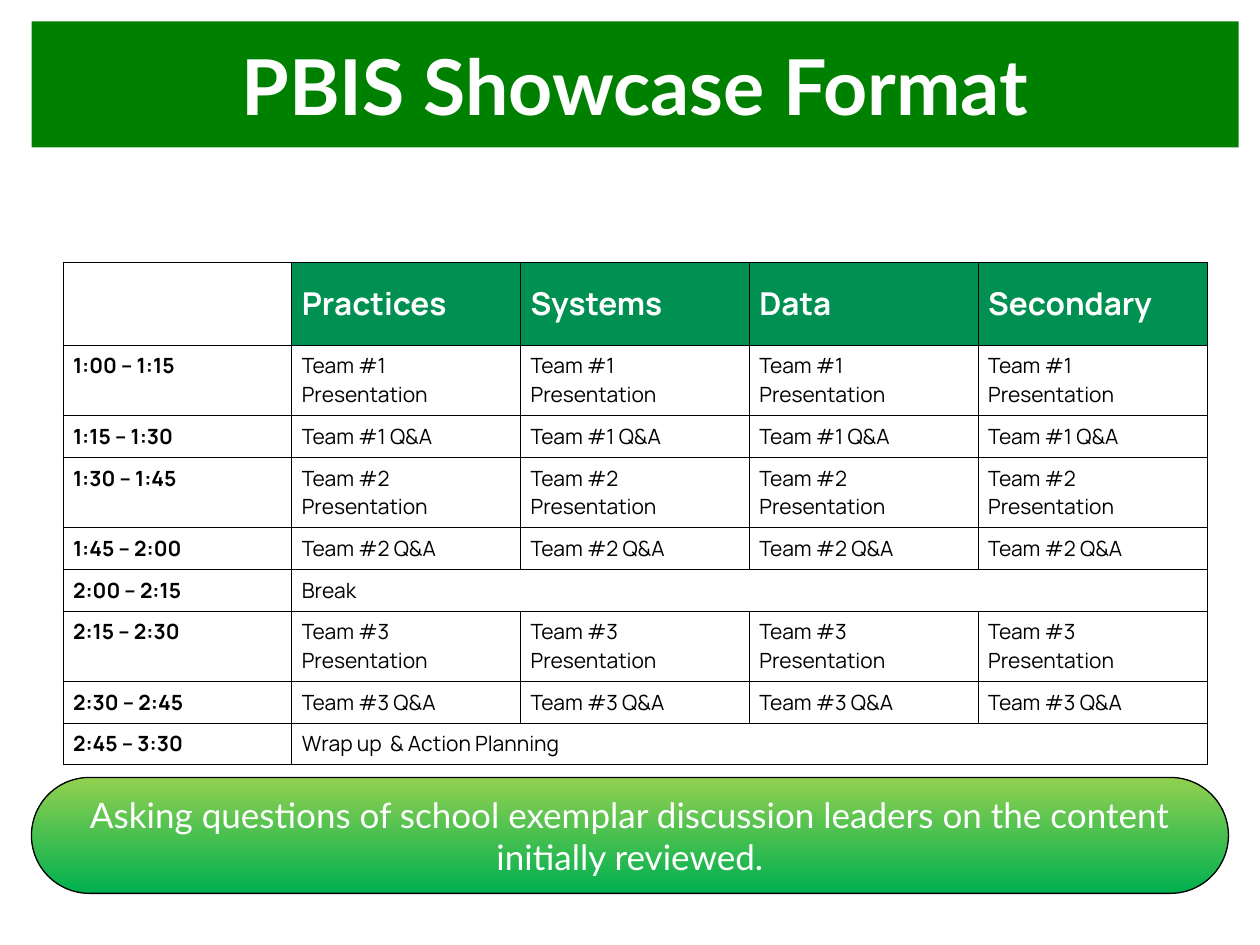
from lxml import etree
from pptx import Presentation
from pptx.dml.color import RGBColor
from pptx.enum.shapes import MSO_SHAPE as Shape
from pptx.enum.text import MSO_ANCHOR as Anchor, MSO_AUTO_SIZE as AutoSize, PP_ALIGN as Align
from pptx.oxml.ns import qn
from pptx.util import Inches, Pt

TEAMS = ["Practices", "Systems", "Data", "Secondary"]
SCHEDULE = [
    ("1:00 – 1:15", "Team #1 Presentation"),
    ("1:15 – 1:30", "Team #1 Q&A"),
    ("1:30 – 1:45", "Team #2 Presentation"),
    ("1:45 – 2:00", "Team #2 Q&A"),
    ("2:00 – 2:15", "Break"),
    ("2:15 – 2:30", "Team #3 Presentation"),
    ("2:30 – 2:45", "Team #3 Q&A"),
    ("2:45 – 3:30", "Wrap up  & Action Planning"),
]
HEADER_HEIGHT, TALL_ROW, SHORT_ROW = 0.66, 0.56, 0.33


def color(value):
    return RGBColor.from_string(value)


def write_text(frame, text, font="Lato", size=12, ink="000000", bold=False,
               align=Align.LEFT):
    para = frame.paragraphs[0]
    para.alignment = align
    span = para.add_run()
    span.text = text
    span.font.name = font
    span.font.size = Pt(size)
    span.font.bold = bold
    span.font.color.rgb = color(ink)


def add_title(page, box):
    title = page.shapes.title
    title.left, title.top, title.width, title.height = map(Inches, box)
    title.fill.solid()
    title.fill.fore_color.rgb = color("008000")
    frame = title.text_frame
    frame.auto_size = AutoSize.NONE
    frame.vertical_anchor = Anchor.MIDDLE
    write_text(frame, "PBIS Showcase Format", size=44, ink="FFFFFF", bold=True,
               align=Align.CENTER)


def add_borders(cell, ink="000000", width=0.5):
    properties = cell._tc.get_or_add_tcPr()
    for side in ("lnL", "lnR", "lnT", "lnB"):
        line = etree.SubElement(properties, qn(f"a:{side}"), w=str(Pt(width)))
        fill = etree.SubElement(line, qn("a:solidFill"))
        etree.SubElement(fill, qn("a:srgbClr"), val=ink)


def format_cell(cell, fill=None):
    cell.margin_left = cell.margin_right = Inches(0.08)
    cell.margin_top = cell.margin_bottom = Inches(0.05)
    add_borders(cell)
    if fill:
        cell.fill.solid()
        cell.fill.fore_color.rgb = color(fill)
    else:
        cell.fill.background()


def add_schedule(page, box):
    left, top, width, height = map(Inches, box)
    columns = len(TEAMS) + 1
    table = page.shapes.add_table(len(SCHEDULE) + 1, columns, left, top, width, height).table
    for column in table.columns:
        column.width = width // columns

    # Header row
    table.rows[0].height = Inches(HEADER_HEIGHT)
    format_cell(table.cell(0, 0))
    for index, team in enumerate(TEAMS, 1):
        cell = table.cell(0, index)
        format_cell(cell, "009051")
        cell.vertical_anchor = Anchor.MIDDLE
        write_text(cell.text_frame, team, font="Manrope", size=18, ink="FFFFFF", bold=True)

    # Time slots: team sessions fill every column, shared ones span them
    for row, (time, session) in enumerate(SCHEDULE, 1):
        tall = session.endswith("Presentation")
        table.rows[row].height = Inches(TALL_ROW if tall else SHORT_ROW)
        shared = not session.startswith("Team")
        if shared:
            table.cell(row, 1).merge(table.cell(row, columns - 1))
        for index in range(columns):
            cell = table.cell(row, index)
            format_cell(cell)
            if not cell.is_spanned:
                write_text(cell.text_frame, session if index else time,
                           font="Manrope", bold=index == 0)


def add_callout(page, box):
    callout = page.shapes.add_shape(Shape.ROUNDED_RECTANGLE, *map(Inches, box))
    callout.adjustments[0] = 0.5
    callout.shadow.inherit = False
    callout.fill.gradient()
    callout.fill.gradient_angle = 90
    for stop, shade in zip(callout.fill.gradient_stops, ("00B050", "92D050")):
        stop.color.rgb = color(shade)
    callout.line.color.rgb = color("000000")
    callout.line.width = Pt(0.75)
    frame = callout.text_frame
    frame.word_wrap = True
    frame.vertical_anchor = Anchor.MIDDLE
    write_text(frame, "Asking questions of school exemplar discussion leaders "
               "on the content initially reviewed.",
               size=20, ink="FFFFFF", align=Align.CENTER)


def main():
    deck = Presentation()
    deck.slide_width, deck.slide_height = Inches(10), Inches(7.5)
    page = deck.slides.add_slide(deck.slide_layouts[5])
    add_title(page, (0.25, 0.17, 9.58, 1))
    add_callout(page, (0.25, 6.17, 9.5, 0.92))
    add_schedule(page, (0.5, 2.08, 9.08, 3.97))
    deck.save("out.pptx")


if __name__ == "__main__":
    main()
